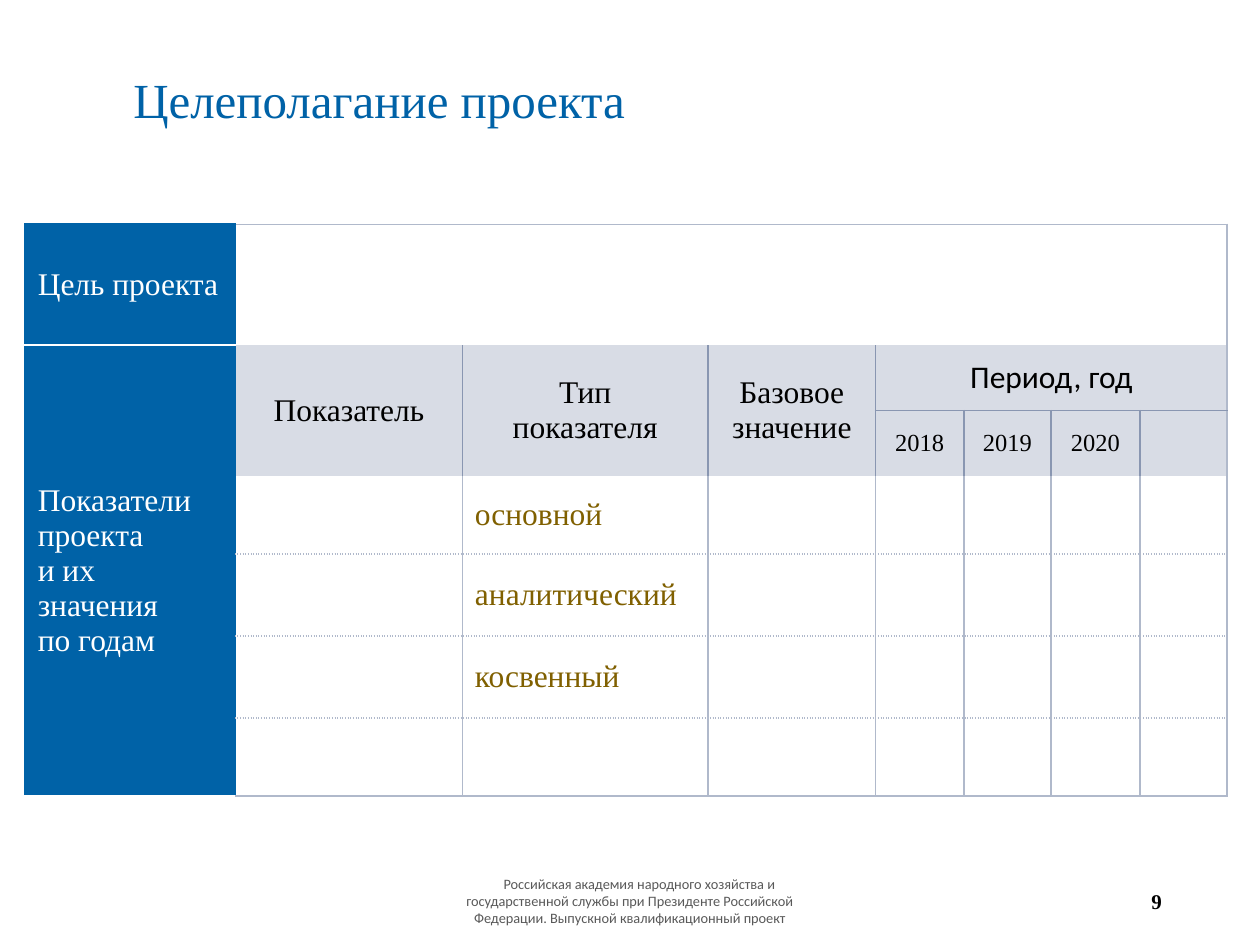
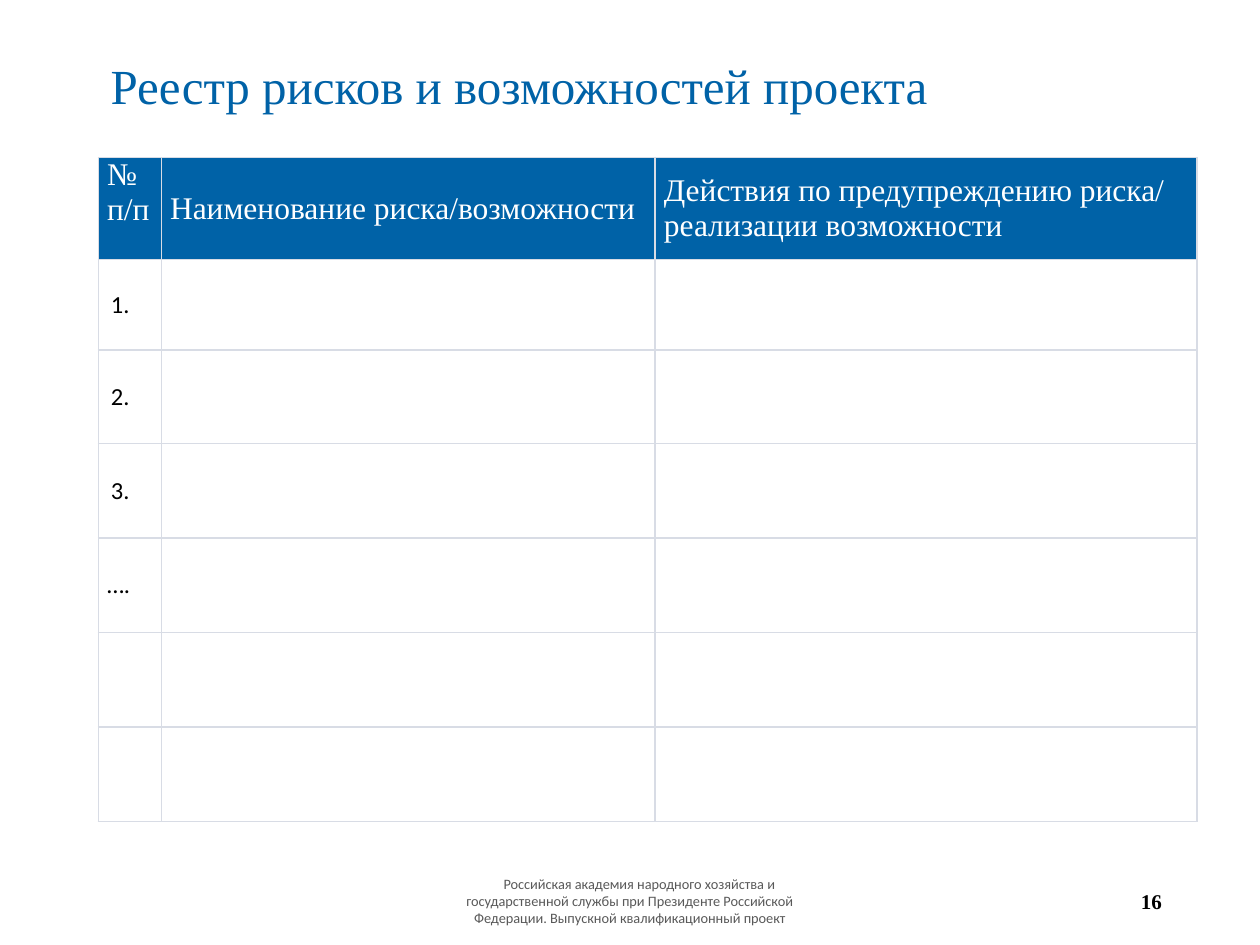
import dataclasses
import typing

import lxml.etree
import pptx
import pptx.dml.color
import pptx.enum.text
import pptx.oxml.ns
import pptx.util

# Slide grid: 100 columns by 75 rows of square units
COLUMNS, ROWS = 100, 75
UNIT = pptx.util.Inches(0.1)

# Shared colours and fonts
BLUE, WHITE, BLACK = "0062A7", "FFFFFF", "000000"
PALE, GREY, SLATE = "D8DCE5", "B0B9CB", "8996B1"
OCHRE, FOOTER_GREY = "806000", "595959"
SERIF, SANS = "Times New Roman", "Calibri"

ALIGN = pptx.enum.text.PP_ALIGN
ANCHOR = pptx.enum.text.MSO_ANCHOR
FOOTER = ("Российская академия народного хозяйства и государственной службы при "
          "Президенте Российской Федерации. Выпускной квалификационный проект")


@dataclasses.dataclass(frozen=True)
class Box:
    left: float
    top: float
    width: float
    height: float


@dataclasses.dataclass(frozen=True)
class Style:
    size: float
    color: str = BLACK
    face: str = SERIF
    bold: bool = False
    align: typing.Any = ALIGN.LEFT
    spacing: float = 1.0


@dataclasses.dataclass(frozen=True)
class Line:
    color: str
    width: float = 1
    dash: str = "solid"


@dataclasses.dataclass(frozen=True)
class Entry:
    """A table cell; rows and columns tell how far it spans."""
    text: str = ""
    style: Style = Style(18)
    fill: str = WHITE
    rows: int = 1
    columns: int = 1
    side_margin: float = 1
    edge_margin: float = 0.5
    anchor: typing.Any = ANCHOR.MIDDLE


Position = tuple[int, int]
Borders = dict[str, Line]
BorderRule = typing.Callable[[int, int, Entry], Borders]

TITLE = Style(28, BLUE, spacing=0.9)
FOOTER_TEXT = Style(8.2, FOOTER_GREY, SANS, align=ALIGN.CENTER)
PAGE_NUMBER = Style(12, bold=True, align=ALIGN.RIGHT)
ON_BLUE = Style(18, WHITE)
HEADING = Style(18, align=ALIGN.CENTER)
PERIOD = Style(18, face=SANS, align=ALIGN.CENTER)
YEAR = Style(14, align=ALIGN.CENTER)
INDICATOR = Style(18, OCHRE)
RISK_NUMBER = Style(14, face=SANS)


def grid(units: float) -> int:
    return round(units * UNIT)


def rgb(color: str) -> pptx.dml.color.RGBColor:
    return pptx.dml.color.RGBColor.from_string(color)


def set_all(target: typing.Any, values: dict[str, typing.Any]) -> None:
    for attribute, value in values.items():
        setattr(target, attribute, value)


def write(frame: typing.Any, text: str, style: Style) -> None:
    frame.text = text
    for paragraph in frame.paragraphs:
        set_all(paragraph, {"alignment": style.align, "line_spacing": style.spacing})
        set_all(paragraph.font, {"size": pptx.util.Pt(style.size), "name": style.face,
                                 "bold": style.bold})
        for run in paragraph.runs:
            set_all(run.font, {"size": pptx.util.Pt(style.size), "name": style.face,
                               "bold": style.bold})
            run.font.color.rgb = rgb(style.color)


def add_text(slide: typing.Any, box: Box, text: str, style: Style,
             side_margin: float = 1) -> typing.Any:
    lengths = [grid(units) for units in dataclasses.astuple(box)]
    frame = slide.shapes.add_textbox(*lengths).text_frame
    set_all(frame, {"word_wrap": True, "vertical_anchor": ANCHOR.MIDDLE,
                    "margin_left": grid(side_margin), "margin_right": grid(side_margin)})
    write(frame, text, style)
    return frame


def add_page(deck: typing.Any, title: str, title_box: Box, number: int) -> typing.Any:
    slide = deck.slides.add_slide(deck.slide_layouts[6])
    footer = add_text(slide, Box(33.1, 69.5, 33.8, 4), FOOTER, FOOTER_TEXT, 1.5)
    footer.paragraphs[0]._p.get_or_add_pPr().set("indent", str(grid(1.5)))
    add_text(slide, Box(70.7, 69.5, 22.5, 4), str(number), PAGE_NUMBER)
    add_text(slide, title_box, title, TITLE)
    return slide


# Tables
def draw_borders(cell: typing.Any, borders: Borders) -> None:
    properties = cell._tc.get_or_add_tcPr()
    for index, side in enumerate("LRTB"):
        edge = lxml.etree.Element(pptx.oxml.ns.qn(f"a:ln{side}"))
        properties.insert(index, edge)

        def part(parent: typing.Any, tag: str, **values: str) -> typing.Any:
            return lxml.etree.SubElement(parent, pptx.oxml.ns.qn(tag), values)

        line = borders.get(side)
        if line is None:
            part(edge, "a:noFill")
            continue
        edge.set("w", str(pptx.util.Pt(line.width)))
        part(part(edge, "a:solidFill"), "a:srgbClr", val=line.color)
        part(edge, "a:prstDash", val=line.dash)


def add_grid_table(slide: typing.Any, left: float, top: float, widths: list[float],
                   heights: list[float], entries: dict[Position, Entry],
                   rule: BorderRule) -> None:
    table = slide.shapes.add_table(len(heights), len(widths), grid(left), grid(top),
                                   grid(sum(widths)), grid(sum(heights))).table
    set_all(table, {"first_row": False, "horz_banding": False})
    for column, width in zip(table.columns, widths):
        column.width = grid(width)
    for row, height in zip(table.rows, heights):
        row.height = grid(height)
    for (row, column), entry in entries.items():
        if entry.rows * entry.columns > 1:
            table.cell(row, column).merge(
                table.cell(row + entry.rows - 1, column + entry.columns - 1))
    for row in range(len(heights)):
        for column in range(len(widths)):
            cell = table.cell(row, column)
            entry = entries.get((row, column), Entry())
            cell.fill.solid()
            cell.fill.fore_color.rgb = rgb(entry.fill)
            if cell.is_spanned:
                continue
            side, edge = grid(entry.side_margin), grid(entry.edge_margin)
            set_all(cell, {"vertical_anchor": entry.anchor,
                           "margin_left": side, "margin_right": side,
                           "margin_top": edge, "margin_bottom": edge})
            write(cell.text_frame, entry.text, entry.style)
            draw_borders(cell, rule(row, column, entry))


# Goal-setting slide
def goal_borders(row: int, column: int, entry: Entry) -> Borders:
    last_row, last_column = row + entry.rows - 1, column + entry.columns - 1
    if column == 0:
        return {"L": Line(BLUE, 1.5), "R": Line(BLUE), "B": Line(WHITE, 1.5),
                "T": Line(BLUE if row == 0 else WHITE, 1.5)}
    in_heading = row in (1, 2)
    inner = Line(SLATE if in_heading else GREY)
    dotted = Line(GREY, 1.5, "sysDot")
    borders = {"L": Line(BLUE) if column == 1 else inner,
               "R": Line(GREY) if last_column == 7 else inner}
    if row == 0:
        borders["T"] = Line(GREY)
    elif row == 2:
        borders["T"] = inner
    elif row > 3:
        borders["T"] = dotted
    if last_row == 1:
        borders["B"] = inner
    elif row >= 3:
        borders["B"] = Line(GREY) if row == 6 else dotted
    return borders


def add_goal_slide(deck: typing.Any) -> None:
    slide = add_page(deck, "Целеполагание проекта", Box(9.6, 3.1, 70.3, 10.1), 9)
    entries = {
        (0, 0): Entry("Цель проекта", ON_BLUE, BLUE),
        (0, 1): Entry(columns=7),
        (1, 0): Entry("Показатели\nпроекта\nи их значения\nпо годам", ON_BLUE, BLUE, rows=6),
        (1, 4): Entry("Период, год", PERIOD, PALE, columns=4),
    }
    headings = ["Показатель", "Тип\nпоказателя", "Базовое\nзначение"]
    for column, heading in enumerate(headings, 1):
        entries[1, column] = Entry(heading, HEADING, PALE, rows=2)
    for column, year in enumerate(["2018", "2019", "2020", ""], 4):
        entries[2, column] = Entry(year, YEAR, PALE)
    for row, indicator in enumerate(["основной", "аналитический", "косвенный"], 3):
        entries[row, 2] = Entry(indicator, INDICATOR)
    add_grid_table(slide, 2, 17.8, [16.7, 18, 19.5, 13.3, 7, 6.9, 7.1, 6.9],
                   [9.6, 5.2, 5.2, 6.2, 6.5, 6.5, 6.2], entries, goal_borders)


# Risk register slide
def risk_borders(row: int, column: int, entry: Entry) -> Borders:
    return dict.fromkeys("LRTB", Line(PALE))


def add_risk_slide(deck: typing.Any) -> None:
    slide = add_page(deck, "Реестр рисков и возможностей проекта",
                     Box(7.8, 2.5, 83.9, 9), 16)
    headings = ["№\nп/п", "Наименование риска/возможности",
                "Действия по предупреждению риска/\nреализации возможности"]
    entries = {(0, column): Entry(heading, ON_BLUE, BLUE, side_margin=0.7, edge_margin=0,
                                  anchor=ANCHOR.MIDDLE if column else ANCHOR.TOP)
               for column, heading in enumerate(headings)}
    for row in (1, 2, 3):
        entries[row, 0] = Entry(f"{row}.", RISK_NUMBER)
    entries[4, 0] = Entry("….", RISK_NUMBER, side_margin=0.7, edge_margin=0)
    add_grid_table(slide, 7.8, 12.5, [5, 39.2, 43], [8.1, 7.2, 7.4] + [7.5] * 4,
                   entries, risk_borders)


def main() -> None:
    deck = pptx.Presentation()
    set_all(deck, {"slide_width": grid(COLUMNS), "slide_height": grid(ROWS)})
    add_goal_slide(deck)
    add_risk_slide(deck)
    deck.save("out.pptx")


if __name__ == "__main__":
    main()
